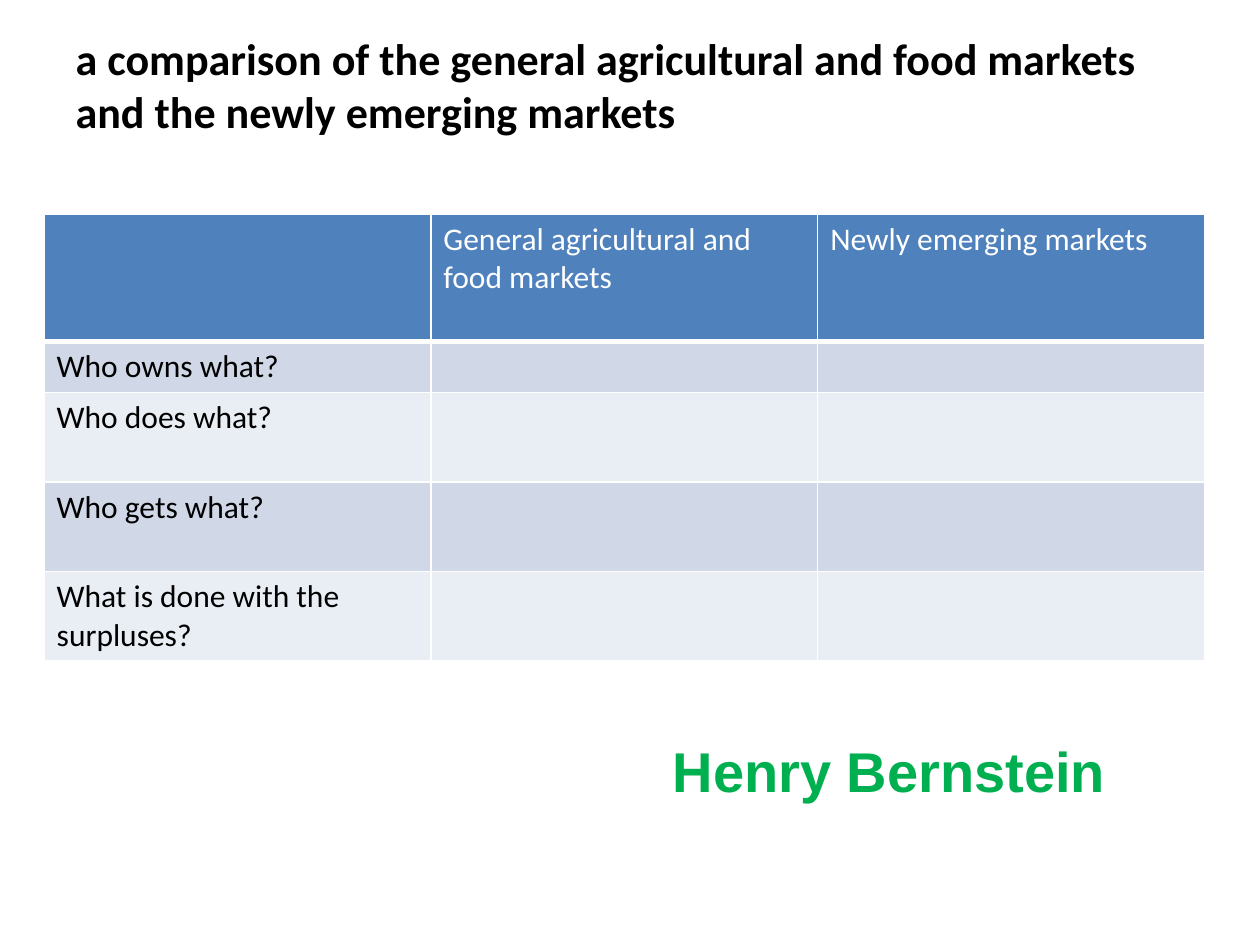
from dataclasses import dataclass

from lxml import etree
from pptx import Presentation
from pptx.dml.color import RGBColor
from pptx.enum.text import MSO_ANCHOR, PP_ALIGN
from pptx.oxml.ns import qn
from pptx.util import Inches, Pt

LEFT = PP_ALIGN.LEFT
TOP = MSO_ANCHOR.TOP
TITLE_ONLY = 5


@dataclass(frozen=True)
class Theme:
    body_font: str = "Calibri"
    name_font: str = "Arial"
    title_size: float = 25.2
    table_size: float = 18
    name_size: float = 32
    black: str = "000000"
    white: str = "FFFFFF"
    header: str = "4F81BD"
    bands: tuple = ("D0D8E8", "E9EDF4")
    green: str = "00B050"


THEME = Theme()
TITLE = ("a comparison of the general agricultural and food markets "
         "and the newly emerging markets")
HEADINGS = ["", "General agricultural and food markets", "Newly emerging markets"]
QUESTIONS = ["Who owns what?", "Who does what?", "Who gets what?",
             "What is done with the surpluses?"]
COLUMN_WIDTH = 3.07
ROW_HEIGHTS = [1.01, 0.4, 0.71, 0.71, 0.71]


def write(frame, text, font, size, color, bold=False):
    frame.text = text
    frame.word_wrap = True
    for para in frame.paragraphs:
        para.alignment = LEFT
        para.font.size = Pt(size)
        for span in para.runs:
            span.font.name = font
            span.font.size = Pt(size)
            span.font.bold = bold
            span.font.color.rgb = RGBColor.from_string(color)


def add_title(page):
    title = page.shapes.title
    title.left, title.top = Inches(0.5), Inches(0.25)
    title.width, title.height = Inches(9), Inches(1.02)
    frame = title.text_frame
    write(frame, TITLE, THEME.body_font, THEME.title_size, THEME.black, bold=True)
    frame.vertical_anchor = TOP
    frame.margin_top = 0


def set_borders(cell, widths):
    properties = cell._tc.get_or_add_tcPr()
    for side, width in widths.items():
        line = etree.SubElement(properties, qn(f"a:ln{side}"), w=str(Pt(width)))
        fill = etree.SubElement(line, qn("a:solidFill"))
        etree.SubElement(fill, qn("a:srgbClr"), val=THEME.white)


def format_cell(cell, text, fill, color, top, bottom):
    if text:
        write(cell.text_frame, text, THEME.body_font, THEME.table_size, color)
    set_borders(cell, {"L": 1, "R": 1, "T": top, "B": bottom})
    cell.fill.solid()
    cell.fill.fore_color.rgb = RGBColor.from_string(fill)


def add_comparison_table(page):
    rows = [HEADINGS] + [[question, "", ""] for question in QUESTIONS]
    table = page.shapes.add_table(
        len(rows), len(HEADINGS), Inches(0.35), Inches(1.7),
        Inches(COLUMN_WIDTH * len(HEADINGS)), Inches(sum(ROW_HEIGHTS))).table
    for column in table.columns:
        column.width = Inches(COLUMN_WIDTH)
    for index, texts in enumerate(rows):
        table.rows[index].height = Inches(ROW_HEIGHTS[index])
        is_header = index == 0
        fill = THEME.header if is_header else THEME.bands[(index - 1) % 2]
        color = THEME.white if is_header else THEME.black
        top, bottom = 3 if index == 1 else 1, 3 if is_header else 1
        for cell, text in zip(table.rows[index].cells, texts):
            format_cell(cell, text, fill, color, top, bottom)


def add_author(page):
    box = page.shapes.add_textbox(Inches(5.24), Inches(5.8), Inches(4.17), Inches(0.64))
    write(box.text_frame, "Henry Bernstein", THEME.name_font, THEME.name_size,
          THEME.green, bold=True)


def main():
    deck = Presentation()
    deck.slide_width, deck.slide_height = Inches(10), Inches(7.5)
    page = deck.slides.add_slide(deck.slide_layouts[TITLE_ONLY])
    add_title(page)
    add_comparison_table(page)
    add_author(page)
    deck.save("out.pptx")


if __name__ == "__main__":
    main()
